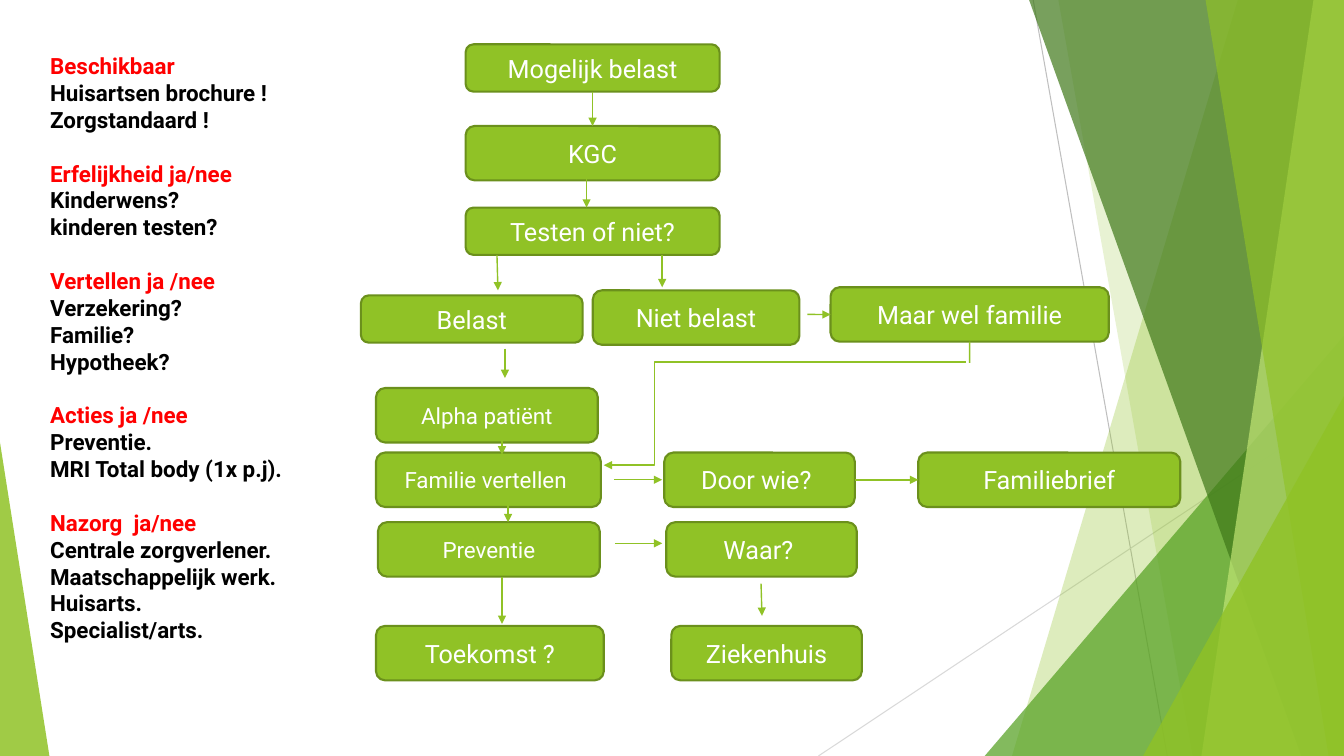
from lxml import etree
from pptx import Presentation
from pptx.dml.color import RGBColor
from pptx.enum import shapes, text
from pptx.oxml.ns import qn
from pptx.util import Pt

GREEN = "90C226"


def paint(fmt, color, opacity=100):
    """Give a fill a solid colour, with opacity in percent."""
    fmt.solid()
    fmt.fore_color.rgb = RGBColor.from_string(color)
    if opacity < 100:
        clr = fmt._xPr.find(qn("a:solidFill"))[0]
        etree.SubElement(clr, qn("a:alpha"), val=str(opacity * 1000))


def connect(x1, y1, x2, y2, color=GREEN, width=1, arrow=True,
            kind=shapes.MSO_CONNECTOR.STRAIGHT):
    c = s.shapes.add_connector(kind, Pt(x1), Pt(y1), Pt(x2), Pt(y2))
    paint(c.line.fill, color)
    c.line.width = Pt(width)
    if arrow:
        etree.SubElement(c.line._get_or_add_ln(), qn("a:tailEnd"), type="triangle")
    etree.SubElement(c._element.spPr, qn("a:effectLst"))
    return c


prs = Presentation()
prs.slide_width, prs.slide_height = Pt(960), Pt(540)
s = prs.slides.add_slide(prs.slide_layouts[6])

# Background: thin lines
connect(738, 0, 833.8, 540, "BFBFBF", 0.75, arrow=False)
connect(960, 290.2, 584.6, 540, "D9D9D9", 0.75, arrow=False)

# Background: bands reaching the right edge (top x, bottom x) and
# right-angled triangles (left, top, width, height, apex)
facets = [
    ((884.2, 722.9), GREEN, 30),
    ((756, 851.8), GREEN, 20),
    ((703.4, 239.8, 256.6, 300.2, 1), "54A021", 72),
    ((735.1, 929.5), "3F7819", 70),
    ((938.2, 858.2), "C0E474", 70),
    ((861.1, 949), GREEN, 65),
    ((816.5, 283, 143.5, 257, 1), GREEN, 80),
    ((0, 316.1, 35.3, 223.9, 0), GREEN, 85),
]
for geometry, color, opacity in facets:
    if len(geometry) == 2:
        top, bottom = geometry
        outline = s.shapes.build_freeform(Pt(top), 0)
        outline.add_line_segments(
            [(Pt(960), 0), (Pt(960), Pt(540)), (Pt(bottom), Pt(540))])
        sp = outline.convert_to_shape()
    else:
        *frame, apex = geometry
        sp = s.shapes.add_shape(shapes.MSO_SHAPE.ISOSCELES_TRIANGLE, *map(Pt, frame))
        sp.adjustments[0] = apex
    sp.shadow.inherit = False
    paint(sp.fill, color, opacity)
    sp.line.fill.background()

# Topic list: red heading, black lines
topics = [
    ("Beschikbaar", "Huisartsen brochure !", "Zorgstandaard !"),
    ("Erfelijkheid ja/nee", "Kinderwens?", "kinderen testen?"),
    ("Vertellen ja /nee", "Verzekering?", "Familie?", "Hypotheek?"),
    ("Acties ja /nee", "Preventie.", "MRI Total body (1x p.j)."),
    ("Nazorg  ja/nee", "Centrale zorgverlener.", "Maatschappelijk werk.",
     "Huisarts.", "Specialist/arts."),
]
tf = s.shapes.add_textbox(Pt(28.8), Pt(33.8), Pt(192.2), Pt(459.4)).text_frame
tf.word_wrap = True
p = tf.paragraphs[0]
for i, topic in enumerate(topics):
    for j, line in enumerate(topic):
        if i or j:
            p = tf.add_paragraph()
        if i and not j:
            p.space_before = Pt(19.2)
        p.text = line
        p.font.name, p.font.size, p.font.bold = "Roboto", Pt(16), True
        p.font.color.rgb = RGBColor.from_string("000000" if j else "FF0000")

# Flowchart boxes: label, left, top, width, height, text size
boxes = [
    ("Mogelijk belast", 332.6, 31.7, 181.4, 33.8, 18),
    ("KGC", 332.6, 90, 181.4, 38.9, 18),
    ("Testen of niet?", 332.6, 148.3, 181.4, 33.8, 18),
    ("Belast", 257.8, 211, 158.4, 33.8, 18),
    ("Niet belast", 423.4, 207.4, 147.6, 38.9, 18),
    ("Maar wel familie", 593.3, 205.2, 198.7, 38.9, 18),
    ("Alpha patiënt", 268.6, 277.2, 158.4, 38.9, 16),
    ("Familie vertellen ", 268.6, 323.3, 160.6, 38.9, 16),
    ("Door wie? ", 474.5, 323.3, 136.1, 38.9, 18),
    ("Familiebrief", 655.9, 323.3, 187.2, 38.9, 18),
    ("Preventie", 270, 373, 158.4, 38.9, 16),
    ("Waar? ", 475.9, 373, 136.1, 38.9, 18),
    ("Toekomst ?", 268.6, 447.1, 162.7, 38.9, 18),
    ("Ziekenhuis", 479.5, 447.1, 136.1, 38.9, 18),
]
box = {}
for label, x, y, w, h, size in boxes:
    sp = s.shapes.add_shape(shapes.MSO_SHAPE.ROUNDED_RECTANGLE, Pt(x), Pt(y), Pt(w), Pt(h))
    sp.shadow.inherit = False
    paint(sp.fill, GREEN)
    paint(sp.line.fill, "6B901C")
    sp.line.width = Pt(1.5)
    sp.text_frame.vertical_anchor = text.MSO_ANCHOR.MIDDLE
    p = sp.text_frame.paragraphs[0]
    p.text, p.alignment = label, text.PP_ALIGN.CENTER
    p.font.name, p.font.size = "Roboto", Pt(size)
    p.font.color.rgb = RGBColor.from_string("FFFFFF")
    box[label.strip()] = sp

# Arrows joined to box sides
c = connect(423.4, 65.5, 423.4, 90)
c.begin_connect(box["Mogelijk belast"], 2)
c.end_connect(box["KGC"], 0)
c = connect(610.6, 342.7, 655.9, 342.7)
c.begin_connect(box["Door wie?"], 3)
c.end_connect(box["Familiebrief"], 1)
c = connect(576.7, 224.6, 593.3, 224.6)
c.end_connect(box["Maar wel familie"], 1)

# Free arrows
for ends in [
    (419, 125.3, 419, 148.3),
    (355, 182.2, 355.7, 207.4),
    (473, 182.2, 473, 205.2),
    (360.7, 249.1, 360.7, 270),
    (358.6, 303.8, 358.6, 324.7),
    (362.9, 352.1, 362.9, 373),
    (358.6, 411.8, 358.6, 445.7),
    (543.6, 416.9, 544.3, 439.9),
    (438.5, 342.7, 473, 342.7),
    (439.2, 388.1, 473, 388.1),
]:
    connect(*ends)

# Route from "Maar wel familie" back to "Familie vertellen"
c = connect(692.6, 244.1, 692.6, 259.2, arrow=False)
c.begin_connect(box["Maar wel familie"], 2)
c = connect(689.8, 258.5, 431.3, 332.3, kind=shapes.MSO_CONNECTOR.ELBOW)
bends = c._element.spPr.find(qn("a:prstGeom")).get_or_add_avLst()
etree.SubElement(bends, qn("a:gd"), name="adj1", fmla="val 86000")

prs.save("out.pptx")
